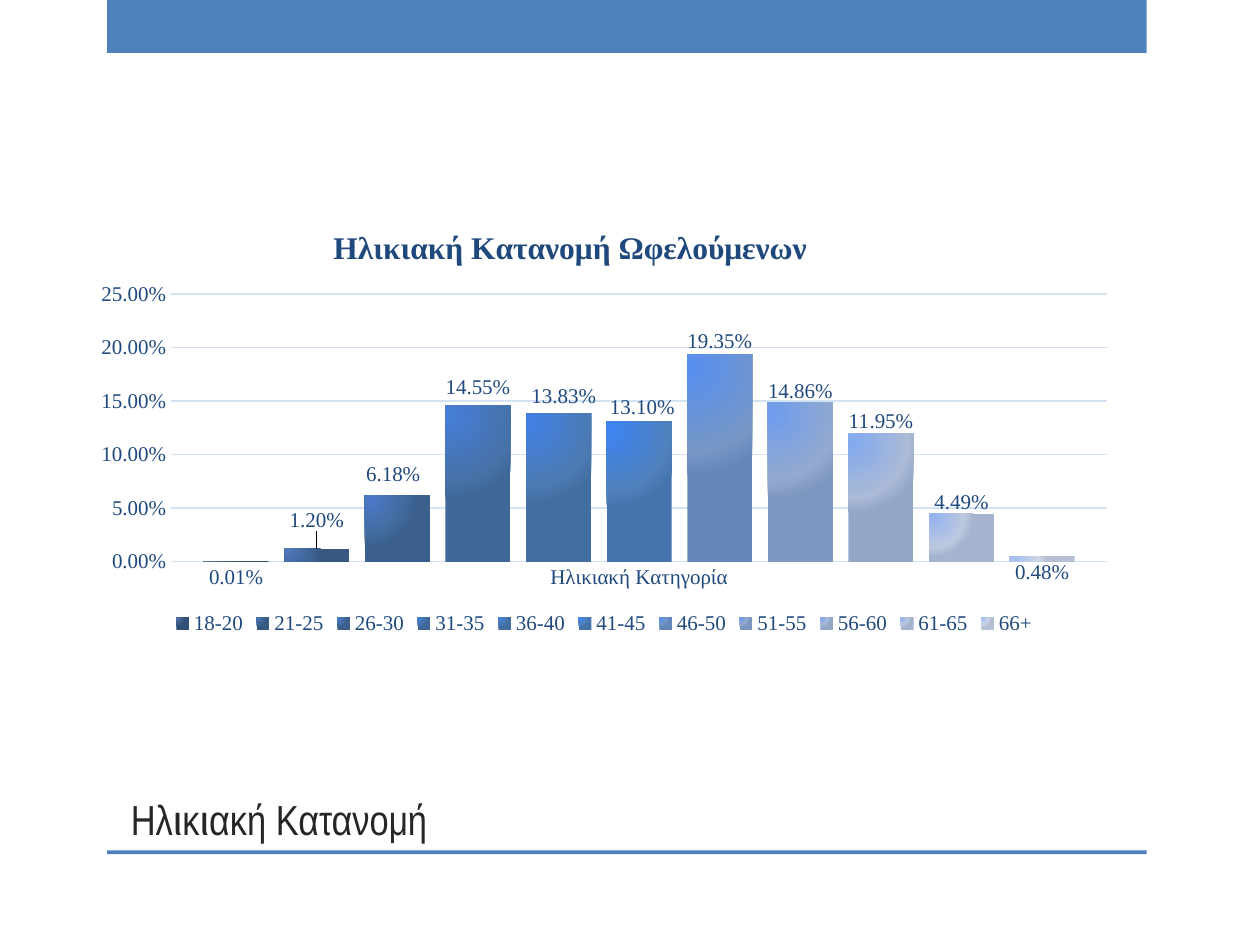
import dataclasses

import lxml.etree
import pptx
import pptx.chart.data
import pptx.dml.color
import pptx.enum.chart
import pptx.enum.shapes
import pptx.enum.text
import pptx.oxml
import pptx.oxml.ns
import pptx.util

qn = pptx.oxml.ns.qn


@dataclasses.dataclass(frozen=True)
class Theme:
    bar: str = "4F81BD"
    ink: str = "262626"
    navy: str = "1F497D"
    grid: str = "D4E3F4"
    head: str = "Arial Narrow"
    body: str = "Times New Roman"
    big: int = 24
    mid: int = 18
    small: int = 12
    hair: float = 0.75


# Age group, share, gradient from highlight to edge, label shift in % of chart
AGES = [
    ("18-20", 0.0001, "5574AB 365880 304F74", None),
    ("21-25", 0.012, "4F77BB 3C628F 365881", (0, -10)),
    ("26-30", 0.0618, "4B7ACA 426B9D 3B608D", (-0.4, -8.3)),
    ("31-35", 0.1455, "467DD7 4672A8 3F6797", (0, -7.9)),
    ("36-40", 0.1383, "4280E4 4B7AB3 436EA1", (0.5, -7.4)),
    ("41-45", 0.131, "3D83F1 4F81BD 4574AC", (0.3, -6.7)),
    ("46-50", 0.1935, "578FEF 7696C6 6486B9", (0, -6.5)),
    ("51-55", 0.1486, "6F9CEE 93A9CF 7E97C0", (0, -6.1)),
    ("56-60", 0.1195, "83A9EE AABAD7 94A6C8", (0, -6.5)),
    ("61-65", 0.0449, "94B3EF BCC8DF A4B3CE", (0, -6.1)),
    ("66+", 0.0048, "A4BEF0 CDD6E6 B4BFD4", None),
]
STOPS = (0, 76, 100)
RATE = "0.00%"


def rgb(code):
    return pptx.dml.color.RGBColor.from_string(code)


def style(font, size, color, face, bold=False):
    font.size, font.name, font.bold = pptx.util.Pt(size), face, bold
    font.color.rgb = rgb(color)


def write(frame, text, **form):
    """Put text in a frame as one run, formatted by the keywords of style."""
    run = frame.paragraphs[0].add_run()
    run.text = text
    style(run.font, **form)


def place(node, prev, inner=False, **pos):
    """Set a manual layout, in % of the chart, after the child named prev."""
    for old in node.findall(qn("c:layout")):
        node.remove(old)
    box = lxml.etree.Element(qn("c:layout"))
    man = lxml.etree.SubElement(box, qn("c:manualLayout"))
    tags = [("layoutTarget", "inner")] if inner else []
    if inner or prev == "c:tx":
        tags += [("xMode", "edge"), ("yMode", "edge")]
    tags += [(key, str(round(val / 100, 4))) for key, val in pos.items()]
    for tag, val in tags:
        lxml.etree.SubElement(man, qn("c:" + tag)).set("val", val)
    spot = 0 if prev is None else node.index(node.find(qn(prev))) + 1
    node.insert(spot, box)


def glow(ser, tones):
    """Swap the solid fill of a series for a circular gradient."""
    solid = ser.find(qn("c:spPr")).find(qn("a:solidFill"))
    stops = "".join(
        f'<a:gs pos="{pos * 1000}"><a:srgbClr val="{tone}"/></a:gs>'
        for pos, tone in zip(STOPS, tones.split())
    )
    fill = pptx.oxml.parse_xml(
        f'<a:gradFill {pptx.oxml.ns.nsdecls("a")} rotWithShape="1">'
        f'<a:gsLst>{stops}</a:gsLst><a:path path="circle"><a:fillToRect '
        'l="15000" t="15000" r="100000" b="100000"/></a:path></a:gradFill>'
    )
    solid.getparent().replace(solid, fill)


class Deck:
    """Holds the theme and the current slide; places are grid cells."""

    COLS, ROWS = 100, 75

    def __init__(self, theme):
        self.theme = theme
        self.show = pptx.Presentation()
        self.show.slide_width = pptx.util.Inches(10)
        self.show.slide_height = pptx.util.Inches(7.5)
        self.slide = self.show.slides.add_slide(self.show.slide_layouts[6])

    def cells(self, left, top, wide, high):
        col = self.show.slide_width / self.COLS
        row = self.show.slide_height / self.ROWS
        return [int(n) for n in (left * col, top * row, wide * col, high * row)]

    def band(self, *at):
        kind = pptx.enum.shapes.MSO_SHAPE.RECTANGLE
        shape = self.slide.shapes.add_shape(kind, *self.cells(*at))
        shape.shadow.inherit = False
        shape.fill.solid()
        shape.fill.fore_color.rgb = rgb(self.theme.bar)
        shape.line.fill.background()

    def title(self, text, *at):
        frame = self.slide.shapes.add_textbox(*self.cells(*at)).text_frame
        frame.word_wrap = True
        frame.vertical_anchor = pptx.enum.text.MSO_ANCHOR.BOTTOM
        look = self.theme
        write(frame, text, size=look.big, color=look.ink, face=look.head)

    def chart(self, title, group, rows, *at):
        look, enum = self.theme, pptx.enum.chart
        data = pptx.chart.data.CategoryChartData(number_format=RATE)
        data.categories = [group]
        for name, share, *_ in rows:
            data.add_series(name, [share])
        chart = self.slide.shapes.add_chart(
            enum.XL_CHART_TYPE.COLUMN_CLUSTERED, *self.cells(*at), data
        ).chart
        form = dict(size=look.small, color=look.navy, face=look.body)
        style(chart.font, **form)
        chart.has_title = True
        head = form | dict(size=look.mid, bold=True)
        write(chart.chart_title.text_frame, title, **head)
        chart.chart_title.include_in_layout = False
        chart.has_legend = True
        chart.legend.position = enum.XL_LEGEND_POSITION.BOTTOM
        chart.legend.include_in_layout = False
        style(chart.legend.font, **form)
        self.axes(chart, form)
        plot = chart.plots[0]
        plot.gap_width, plot.overlap = 100, -24
        plot.vary_by_categories = False
        nodes = chart.element.findall(".//" + qn("c:ser"))
        for ser, node, row in zip(plot.series, nodes, rows):
            self.column(ser, node, row, form)
        root = chart.element.find(qn("c:chart"))
        place(root.find(qn("c:title")), "c:tx", x=23.6, y=6)
        place(root.find(qn("c:plotArea")), None, True,
              x=8.65, y=22.2, w=89.4, h=60.2)

    def axes(self, chart, form):
        look, enum = self.theme, pptx.enum.chart
        cat, val = chart.category_axis, chart.value_axis
        val.has_major_gridlines = True
        for axis in (cat, val):
            axis.major_tick_mark = enum.XL_TICK_MARK.NONE
            style(axis.tick_labels.font, **form)
        for line in (cat.format.line, val.major_gridlines.format.line):
            line.color.rgb = rgb(look.grid)
            line.width = pptx.util.Pt(look.hair)
        val.format.line.fill.background()
        val.minimum_scale, val.maximum_scale, val.major_unit = 0, 0.25, 0.05
        val.tick_labels.number_format = RATE
        val.tick_labels.number_format_is_linked = False

    def column(self, ser, node, row, form):
        _, _, tones, shift = row
        ser.format.fill.solid()
        glow(node, tones)
        labels = ser.data_labels
        labels.show_value = True
        labels.number_format, labels.number_format_is_linked = RATE, False
        inside = pptx.enum.chart.XL_LABEL_POSITION.INSIDE_END
        labels.position = inside
        style(labels.font, **form)
        if shift:
            label = ser.points[0].data_label
            label.position = inside
            style(label.font, **form)
            mark = node.find(".//" + qn("c:dLbl"))
            place(mark, "c:idx", x=shift[0], y=shift[1])


def main():
    deck = Deck(Theme())
    for top, high in ((0, 4.2), (67.5, 0.3)):
        deck.band(8.5, top, 82.5, high)
    deck.title("Ηλικιακή Κατανομή", 9.4, 60.7, 74.2, 6.8)
    deck.chart("Ηλικιακή Κατανομή Ωφελούμενων", "Ηλικιακή Κατηγορία", AGES,
               6.4, 15.5, 83.1, 35.3)
    deck.show.save("out.pptx")


if __name__ == "__main__":
    main()
